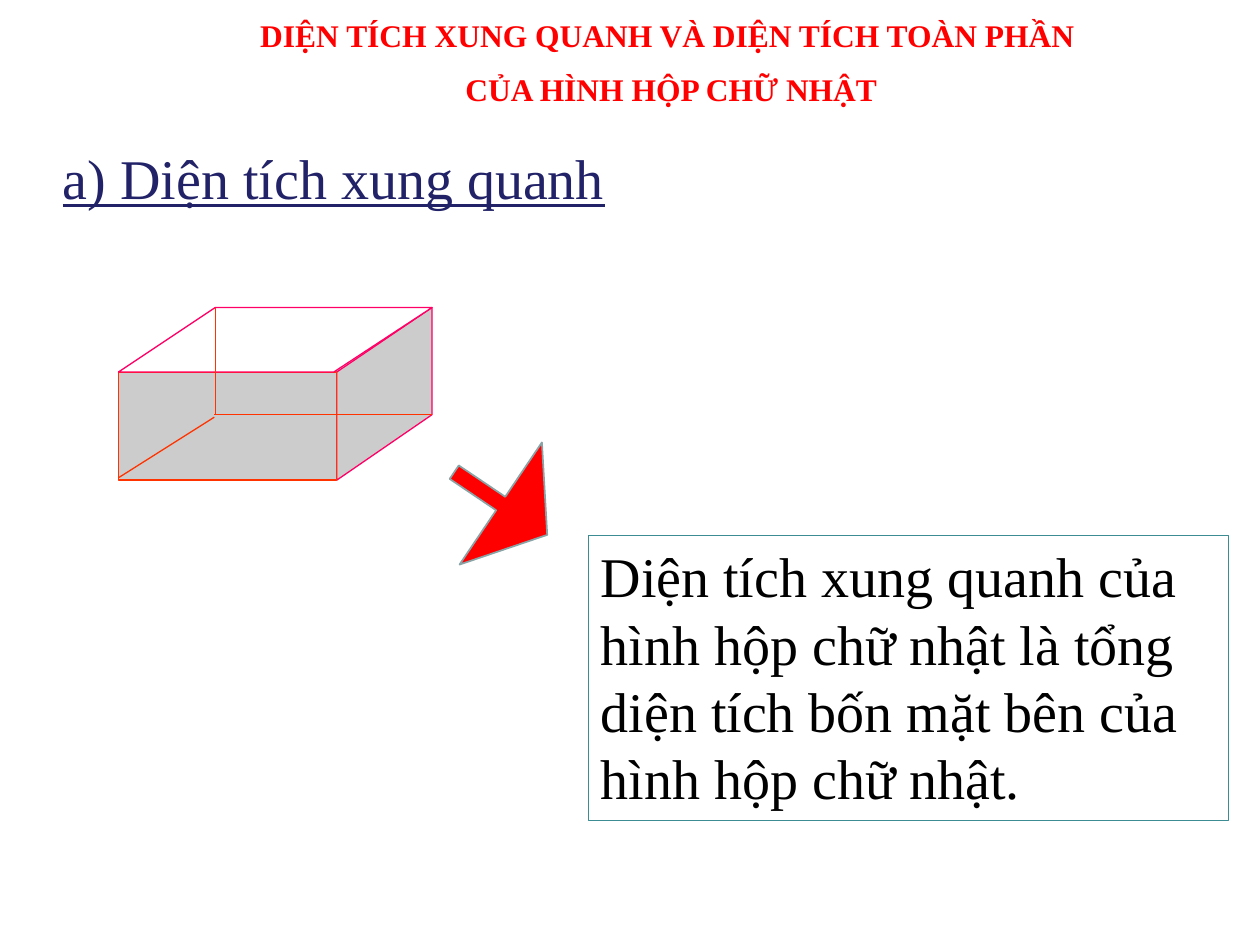
"""Build the slide on the lateral area of a rectangular box."""
from lxml.etree import SubElement
from pptx import Presentation
from pptx.dml.color import RGBColor
from pptx.enum.shapes import MSO_CONNECTOR, MSO_SHAPE
from pptx.enum.text import MSO_ANCHOR, PP_ALIGN
from pptx.oxml.ns import qn
from pptx.util import Cm, Pt

RED = RGBColor(0xFF, 0x00, 0x00)
NAVY = RGBColor(0x22, 0x22, 0x68)
BLACK = RGBColor(0x00, 0x00, 0x00)
WHITE = RGBColor(0xFF, 0xFF, 0xFF)
GREY = RGBColor(0xCC, 0xCC, 0xCC)
PINK = RGBColor(0xFF, 0x00, 0x66)
ORANGE = RGBColor(0xFF, 0x33, 0x00)
TEAL = RGBColor(0x3C, 0x8C, 0x93)
STEEL = RGBColor(0x89, 0xA4, 0xA7)


def paint(shape, fill, line, width=0.75):
    shape.shadow.inherit = False
    if fill is None:
        shape.fill.background()
    else:
        shape.fill.solid()
        shape.fill.fore_color.rgb = fill
    shape.line.color.rgb = line
    shape.line.width = Pt(width)


def write(shape, lines, size, color, align=PP_ALIGN.LEFT, gap=0):
    frame = shape.text_frame
    frame.word_wrap = True
    frame.vertical_anchor = MSO_ANCHOR.TOP
    for i, line in enumerate(lines):
        para = frame.paragraphs[0] if i == 0 else frame.add_paragraph()
        para.text = line
        para.alignment = align
        para.space_before = Pt(gap if i else 0)
        para.font.name = "Times New Roman"
        para.font.size = Pt(size)
        para.font.color.rgb = color
    return frame.paragraphs


deck = Presentation()
deck.slide_width, deck.slide_height = Cm(25.4), Cm(19.05)
slide = deck.slides.add_slide(deck.slide_layouts[6])
shapes = slide.shapes

head = shapes.add_textbox(Cm(1.02), Cm(2.77), Cm(11.53), Cm(1.63))
write(head, ["a) Diện tích xung quanh"], 32, NAVY)[0].font.underline = True

left, right, back, far = 2.39, 6.79, 4.34, 8.71
top, mid, low, base = 6.2, 7.5, 8.36, 9.68

side = [(right, base), (far, low), (far, top), (right, mid)]
lid = [(left, mid), (back, top), (far, top), (6.73, mid)]
front = shapes.add_shape(
    MSO_SHAPE.RECTANGLE, Cm(left), Cm(mid), Cm(right - left), Cm(base - mid))
paint(front, GREY, ORANGE)
for points, fill in ((side, GREY), (lid, WHITE)):
    first, *rest = [(Cm(x), Cm(y)) for x, y in points]
    form = shapes.build_freeform(*first, scale=1.0)
    form.add_line_segments(rest, close=True)
    face = form.convert_to_shape()
    paint(face, fill, PINK)
    if fill == GREY:
        front._element.addprevious(face._element)

for x1, y1, x2, y2 in (
    (back, top, back, low),
    (4.32, 8.41, left, 9.63),
    (far, low, 4.32, low),
):
    edge = shapes.add_connector(
        MSO_CONNECTOR.STRAIGHT, Cm(x1), Cm(y1), Cm(x2), Cm(y2))
    edge.line.color.rgb = ORANGE
    edge.line.width = Pt(0.75)
    SubElement(edge._element.spPr, qn("a:effectLst"))

rule = shapes.add_shape(
    MSO_SHAPE.RECTANGLE, Cm(11.86), Cm(10.8), Cm(12.9), Cm(5.74))
paint(rule, None, TEAL)
write(rule, ["Diện tích xung quanh của hình hộp chữ nhật là tổng "
             "diện tích bốn mặt bên của hình hộp chữ nhật."], 32, BLACK)

arrow = shapes.add_shape(
    MSO_SHAPE.DOWN_ARROW, Cm(8.61), Cm(9.02), Cm(2.97), Cm(2.26))
arrow.adjustments[0] = 0.11
arrow.adjustments[1] = 0.5
arrow.rotation = 304
paint(arrow, RED, STEEL, 1)

title = shapes.add_textbox(Cm(4.01), Cm(0.2), Cm(19.05), Cm(2.18))
for para in write(title, ["DIỆN TÍCH XUNG QUANH VÀ DIỆN TÍCH TOÀN PHẦN ",
                          "CỦA HÌNH HỘP CHỮ NHẬT"],
                  18, RED, PP_ALIGN.CENTER, 9):
    para.font.bold = True

deck.save("out.pptx")
